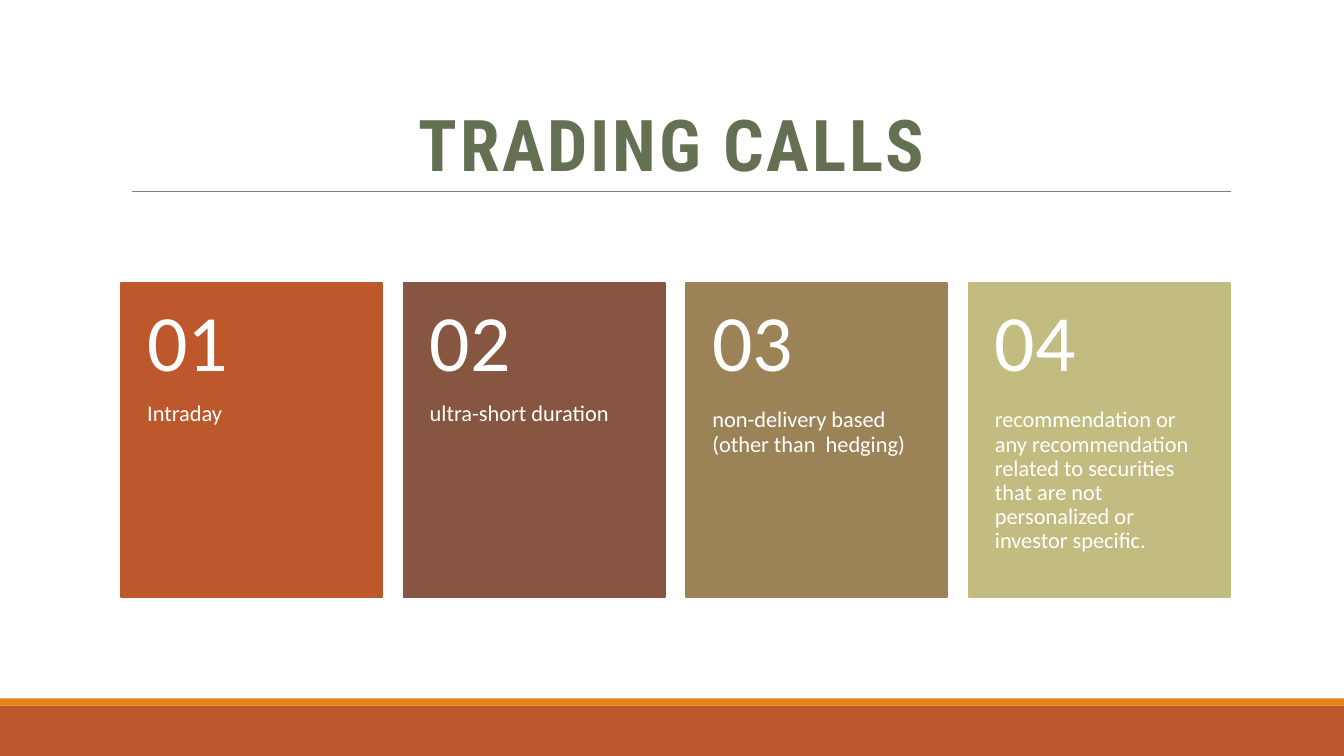
import pptx
import pptx.dml.color
import pptx.enum.shapes
import pptx.enum.text
import pptx.oxml
import pptx.oxml.ns
import pptx.util

Inches = pptx.util.Inches
Pt = pptx.util.Pt
Color = pptx.dml.color.RGBColor
Anchor = pptx.enum.text.MSO_ANCHOR
Align = pptx.enum.text.PP_ALIGN
Shape = pptx.enum.shapes.MSO_SHAPE

WHITE = Color(0xFF, 0xFF, 0xFF)
GREEN = Color(0x63, 0x70, 0x52)
GREY = Color(0x80, 0x80, 0x80)
AMBER = Color(0xE4, 0x83, 0x12)
RUST = Color(0xBD, 0x58, 0x2C)
BROWN = Color(0x86, 0x56, 0x40)
TAN = Color(0x9B, 0x83, 0x57)
SAGE = Color(0xC2, 0xBC, 0x80)

WIDE, HIGH = 13.33, 7.5
CARDS = [
    (RUST, "Intraday"),
    (BROWN, "ultra-short duration"),
    (TAN, "non-delivery based (other than  hedging)"),
    (SAGE, "recommendation or any recommendation related to securities "
           "that are not personalized or investor specific."),
]


def add_rect(slide, box, fill, edge=None):
    rect = slide.shapes.add_shape(Shape.RECTANGLE, *map(Inches, box))
    rect.shadow.inherit = False
    rect.fill.solid()
    rect.fill.fore_color.rgb = fill
    if edge:
        rect.line.color.rgb = fill
        rect.line.width = Pt(edge)
    else:
        rect.line.fill.background()


def add_run(para, text, size, font, color):
    run = para.add_run()
    run.text = text
    run.font.size = Pt(size)
    run.font.name = font
    run.font.color.rgb = color
    return run


def add_text(slide, box, text, size, pads, anchor):
    frame = slide.shapes.add_textbox(*map(Inches, box)).text_frame
    frame.word_wrap = True
    frame.vertical_anchor = anchor
    frame.margin_left = frame.margin_right = Inches(0.26)
    frame.margin_top, frame.margin_bottom = map(Inches, pads)
    para = frame.paragraphs[0]
    para.line_spacing = 0.9
    add_run(para, text, size, "Calibri", WHITE)


def add_foot(slide, box):
    # Amber stripe above a rust band
    left, top, width, height = box
    stripe = 0.07
    add_rect(slide, (left, top + stripe, width, height - stripe), RUST)
    add_rect(slide, (left, top, width, stripe), AMBER)


def add_title(slide, box):
    # Title resting on a thin rule
    left, top, width, height = box
    base = top + height
    rule = slide.shapes.add_connector(
        pptx.enum.shapes.MSO_CONNECTOR.STRAIGHT,
        Inches(left + 1.31), Inches(base),
        Inches(left + width - 1.12), Inches(base))
    rule.line.color.rgb = GREY
    rule.line.width = Pt(0.5)
    props = rule.element.find(pptx.oxml.ns.qn("p:spPr"))
    props.append(pptx.oxml.parse_xml(
        "<a:effectLst %s/>" % pptx.oxml.ns.nsdecls("a")))

    title = slide.shapes.title
    title.left, title.top, title.width, title.height = map(Inches, box)
    frame = title.text_frame
    frame.auto_size = pptx.enum.text.MSO_AUTO_SIZE.NONE
    frame.vertical_anchor = Anchor.BOTTOM
    para = frame.paragraphs[0]
    para.alignment = Align.CENTER
    para.line_spacing = 0.85
    run = add_run(para, "TRADING CALLS", 51, "Roboto Condensed", GREEN)
    run.font.bold = True
    run.font._element.set("spc", "200")


def add_cards(slide, box):
    # Equal columns, each with a number over its text
    left, top, width, height = box
    gap = 0.21
    col = (width - gap * (len(CARDS) - 1)) / len(CARDS)
    head = height * 0.4
    for i, (fill, text) in enumerate(CARDS):
        x = left + i * (col + gap)
        add_rect(slide, (x, top, col, height), fill, 1.25)
        add_text(slide, (x, top + head, col, height - head),
                 text, 16, (0, 0.36), Anchor.TOP)
        add_text(slide, (x, top, col, head),
                 f"{i + 1:02}", 57, (0.18, 0.18), Anchor.MIDDLE)


def main():
    deck = pptx.Presentation()
    deck.slide_width, deck.slide_height = Inches(WIDE), Inches(HIGH)
    slide = deck.slides.add_slide(deck.slide_layouts[5])
    add_foot(slide, (0, 6.93, WIDE, HIGH - 6.93))
    add_title(slide, (0, 0.31, WIDE, 1.59))
    add_cards(slide, (1.2, 2.81, 11, 3.11))
    deck.save("out.pptx")


if __name__ == "__main__":
    main()
